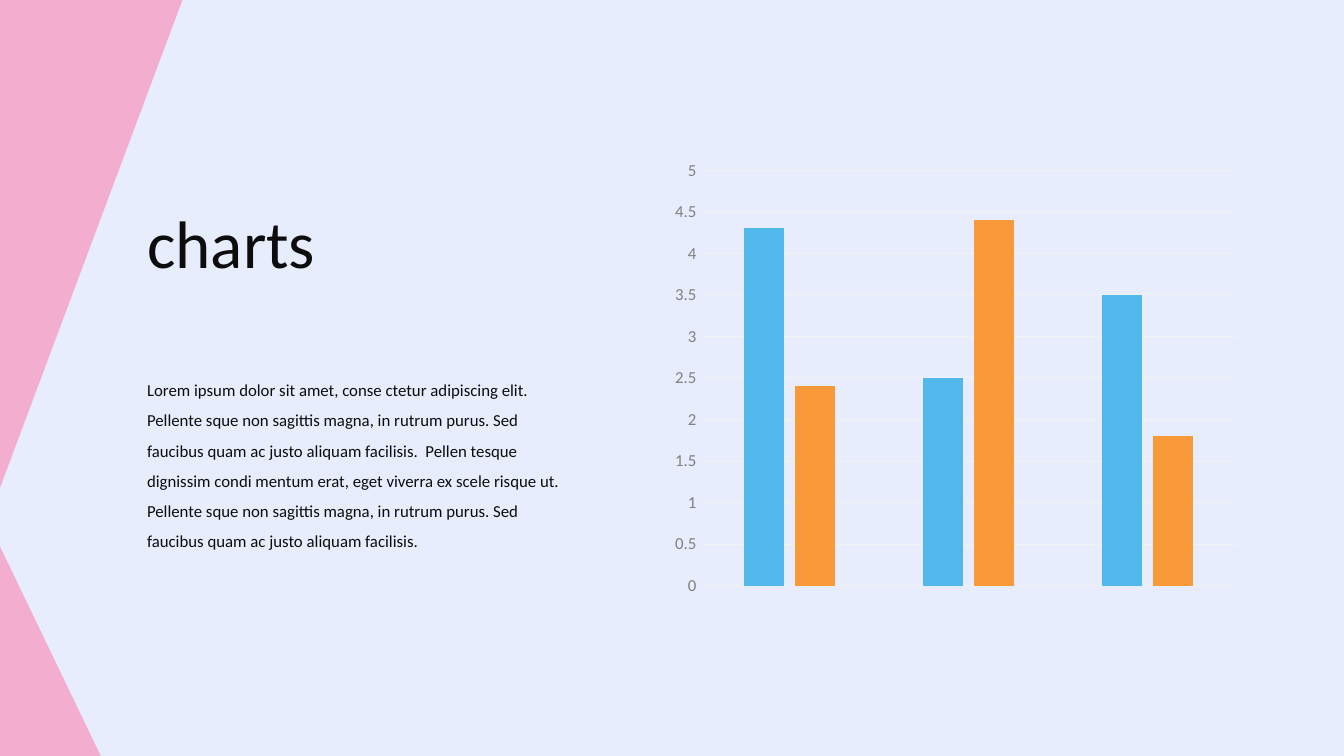
from pptx import Presentation
from pptx import util as u
from pptx.chart.data import CategoryChartData
from pptx.dml.color import RGBColor
from pptx.enum import chart as charts, shapes, text

# Content
TITLE = "charts"
BODY = (
    "Lorem ipsum dolor sit amet, conse ctetur adipiscing elit. "
    "Pellente sque non sagittis magna, in rutrum purus. "
    "Sed faucibus quam ac justo aliquam facilisis.  "
    "Pellen tesque dignissim condi mentum erat, eget viverra ex scele risque ut. "
    "Pellente sque non sagittis magna, in rutrum purus. "
    "Sed faucibus quam ac justo aliquam facilisis."
)
CATEGORIES = ["1", "2", "3"]
BLUE = RGBColor(0x51, 0xB8, 0xEB)
ORANGE = RGBColor(0xF8, 0x9A, 0x3A)
SERIES = [
    ("Series 1", (4.3, 2.5, 3.5), BLUE),
    ("Series 2", (2.4, 4.4, 1.8), ORANGE),
]

# Style
FONT = "Calibri"
BACKGROUND = RGBColor(0xE7, 0xED, 0xFD)
PINK = RGBColor(0xF3, 0xAE, 0xCF)
INK = RGBColor(0x0D, 0x0D, 0x0D)
GREY = RGBColor(0x80, 0x80, 0x80)
GRID = RGBColor(0xF2, 0xF2, 0xF2)

# Layout in inches: a left text column and a chart on the right
WIDTH, HEIGHT = 13.33, 7.5
TEXT_LEFT = 1.36
TOP_WEDGE = (1.81, 4.84)
BOTTOM_WEDGE = (1, 2.08)
CHART_TOP = HEIGHT / 5
CHART_BOX = (6.58, CHART_TOP, 5.8, HEIGHT - 2 * CHART_TOP)


def inches(*lengths):
    return [u.Inches(length) for length in lengths]


def add_wedge(slide, left, top, width, height, rotation=0):
    shape = slide.shapes.add_shape(
        shapes.MSO_SHAPE.RIGHT_TRIANGLE, *inches(left, top, width, height))
    shape.rotation = rotation
    shape.shadow.inherit = False
    shape.fill.solid()
    shape.fill.fore_color.rgb = PINK
    shape.line.fill.background()


def write(shape, box, words, size, spacing):
    shape.left, shape.top, shape.width, shape.height = inches(*box)
    frame = shape.text_frame
    frame.word_wrap = True
    frame.auto_size = text.MSO_AUTO_SIZE.SHAPE_TO_FIT_TEXT
    frame.vertical_anchor = text.MSO_ANCHOR.TOP
    paragraph = frame.paragraphs[0]
    paragraph.alignment = text.PP_ALIGN.LEFT
    paragraph.line_spacing = spacing
    run = paragraph.add_run()
    run.text = words
    run.font.name = FONT
    run.font.size = u.Pt(size)
    run.font.color.rgb = INK


def add_column_chart(slide):
    data = CategoryChartData()
    data.categories = CATEGORIES
    for name, values, _ in SERIES:
        data.add_series(name, values)
    chart = slide.shapes.add_chart(
        charts.XL_CHART_TYPE.COLUMN_CLUSTERED, *inches(*CHART_BOX), data).chart
    chart.has_title = False
    chart.has_legend = False
    chart.font.name = FONT
    chart.font.size = u.Pt(10)

    # Columns
    plot = chart.plots[0]
    plot.vary_by_categories = False
    plot.gap_width = 219
    plot.overlap = -27
    for series, (_, _, color) in zip(plot.series, SERIES):
        series.format.fill.solid()
        series.format.fill.fore_color.rgb = color

    # Axes
    chart.category_axis.visible = False
    axis = chart.value_axis
    axis.minimum_scale, axis.maximum_scale, axis.major_unit = 0, 5, 0.5
    axis.major_tick_mark = axis.minor_tick_mark = charts.XL_TICK_MARK.NONE
    axis.format.line.fill.background()
    axis.tick_labels.font.name = FONT
    axis.tick_labels.font.size = u.Pt(12)
    axis.tick_labels.font.color.rgb = GREY
    grid_line = axis.major_gridlines.format.line
    grid_line.color.rgb = GRID
    grid_line.width = u.Pt(0.75)


def main():
    presentation = Presentation()
    presentation.slide_width, presentation.slide_height = inches(WIDTH, HEIGHT)
    slide = presentation.slides.add_slide(presentation.slide_layouts[5])
    slide.background.fill.solid()
    slide.background.fill.fore_color.rgb = BACKGROUND

    # Corner wedges; a quarter turn about the centre swaps the top one's sides
    width, height = BOTTOM_WEDGE
    add_wedge(slide, 0, HEIGHT - height, width, height)
    width, height = TOP_WEDGE
    shift = (width - height) / 2
    add_wedge(slide, shift, -shift, height, width, rotation=90)

    # Title and body text
    write(slide.shapes.title, (TEXT_LEFT, 1.95, 3.29, 0.91), TITLE, 48, 1)
    body_box = (TEXT_LEFT, 3.62, 4.42, 1.89)
    body = slide.shapes.add_textbox(*inches(*body_box))
    write(body, body_box, BODY, 12, 1.5)

    add_column_chart(slide)
    presentation.save("out.pptx")


if __name__ == "__main__":
    main()
